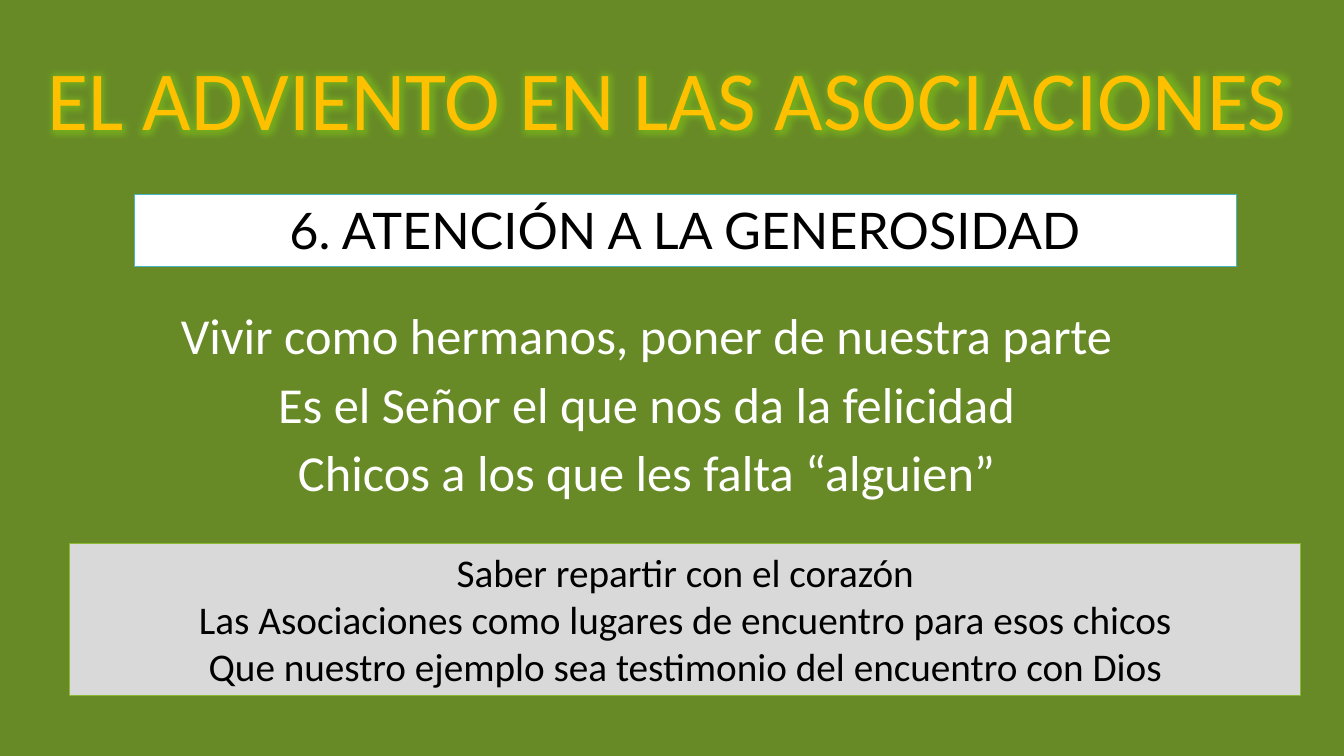
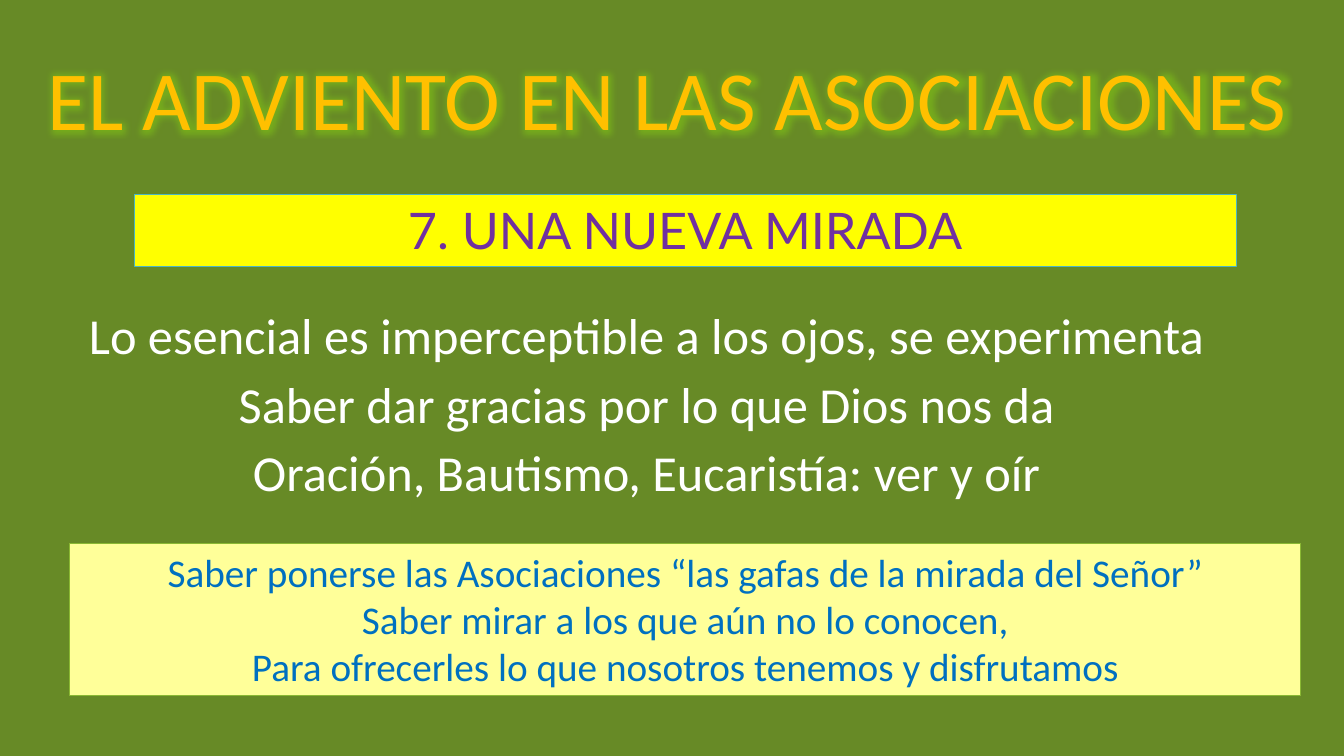
from lxml import etree
from pptx import Presentation
from pptx.dml.color import RGBColor
from pptx.enum.shapes import MSO_SHAPE
from pptx.enum.text import MSO_ANCHOR, PP_ALIGN
from pptx.oxml import parse_xml
from pptx.util import Inches, Pt

GREEN, GOLD, WHITE = "678A26", "FFC000", "FFFFFF"
TEAL, LIME = "4AB5C4", "8AB833"
TITLE = "EL ADVIENTO EN LAS ASOCIACIONES"
GLOW = (
    '<a:effectLst xmlns:a="http://schemas.openxmlformats.org/drawingml/2006/main">'
    '<a:glow rad="139700"><a:srgbClr val="8ADD0E"><a:alpha val="40000"/></a:srgbClr></a:glow>'
    "</a:effectLst>"
)

PAGES = [
    {
        "head": ("6. ATENCIÓN A LA GENEROSIDAD", WHITE, "000000"),
        "body": [
            "Vivir como hermanos, poner de nuestra parte",
            "Es el Señor el que nos da la felicidad",
            "Chicos a los que les falta “alguien”",
        ],
        "foot": ([
            "Saber repartir con el corazón",
            "Las Asociaciones como lugares de encuentro para esos chicos",
            "Que nuestro ejemplo sea testimonio del encuentro con Dios",
        ], "D9D9D9", "000000"),
    },
    {
        "head": ("7. UNA NUEVA MIRADA", "FFFF00", "7030A0"),
        "body": [
            "Lo esencial es imperceptible a los ojos, se experimenta",
            "Saber dar gracias por lo que Dios nos da",
            "Oración, Bautismo, Eucaristía: ver y oír",
        ],
        "foot": ([
            "Saber ponerse las Asociaciones “las gafas de la mirada del Señor”",
            "Saber mirar a los que aún no lo conocen,",
            "Para ofrecerles lo que nosotros tenemos y disfrutamos",
        ], "FFFF99", "0070C0"),
    },
]


def paint(target, tone):
    if hasattr(target, "solid"):
        target.solid()
        target = target.fore_color
    else:
        target = target.color
    target.rgb = RGBColor.from_string(tone)


def block(slide, spot, lines, size, tone, font="Calibri", fill=None, edge=None):
    box = [Inches(n) for n in spot]
    if fill:
        shape = slide.shapes.add_shape(MSO_SHAPE.RECTANGLE, *box)
        shape.shadow.inherit = False
        paint(shape.fill, fill)
        paint(shape.line, edge)
        shape.line.width = Pt(0.5)
    else:
        shape = slide.shapes.add_textbox(*box)
    frame = shape.text_frame
    frame.text = "\n".join(lines)
    frame.word_wrap = True
    frame.vertical_anchor = MSO_ANCHOR.TOP
    for para in frame.paragraphs:
        para.alignment = PP_ALIGN.CENTER
        for run in para.runs:
            run.font.size = Pt(size)
            run.font.name = font
            paint(run.font.fill, tone)
    return frame


deck = Presentation()
deck.slide_width, deck.slide_height = Inches(13.33), Inches(7.5)

for page in PAGES:
    slide = deck.slides.add_slide(deck.slide_layouts[6])
    paint(slide.background.fill, GREEN)

    title = block(slide, (0.33, 0.32, 12.57, 1.2), [TITLE], 60, GOLD)
    title.vertical_anchor = MSO_ANCHOR.BOTTOM
    title.paragraphs[0].line_spacing = 0.9
    props = title.paragraphs[0].runs[0].font.fill._xPr
    props.insert(1, parse_xml(GLOW))

    body = block(slide, (0.33, 3.04, 12.17, 2.11), page["body"], 36, WHITE)
    for para in body.paragraphs:
        para.line_spacing = 0.9
        para.space_before = Pt(10)

    text, fill, tone = page["head"]
    block(slide, (1.33, 1.93, 10.93, 0.71), [text], 36, tone, "Lato", fill, TEAL)

    lines, fill, tone = page["foot"]
    block(slide, (0.69, 5.39, 12.21, 1.51), lines, 28, tone, fill=fill, edge=LIME)

deck.save("out.pptx")
